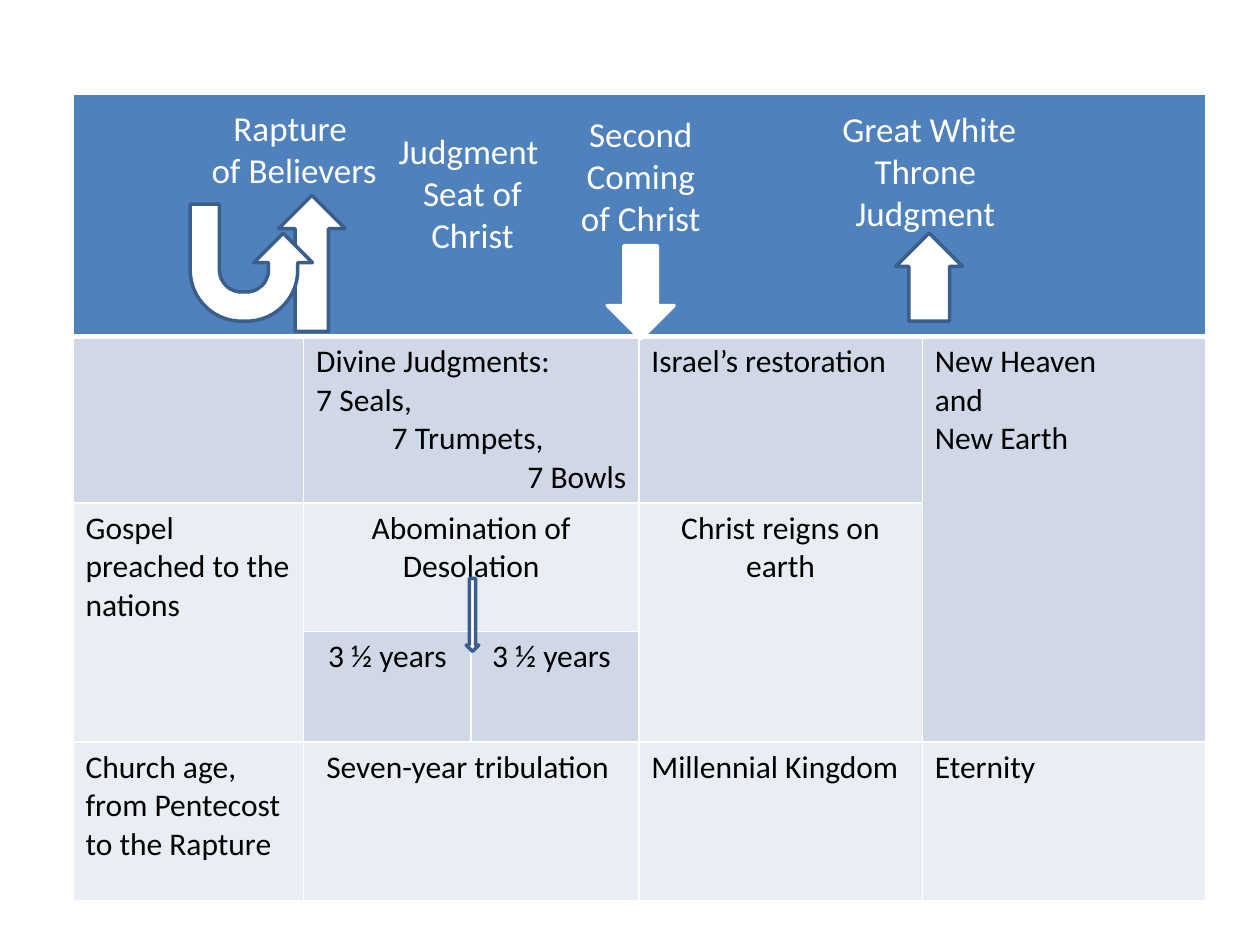
from dataclasses import dataclass

from lxml import etree
from pptx import Presentation
from pptx.dml.color import RGBColor
from pptx.enum.shapes import MSO_SHAPE
from pptx.enum.text import MSO_AUTO_SIZE, PP_ALIGN
from pptx.oxml.ns import qn
from pptx.util import Inches, Pt

LEFT, MID, RIGHT = PP_ALIGN.LEFT, PP_ALIGN.CENTER, PP_ALIGN.RIGHT
DOWN, UTURN = MSO_SHAPE.DOWN_ARROW, MSO_SHAPE.U_TURN_ARROW
FIT = MSO_AUTO_SIZE.SHAPE_TO_FIT_TEXT


@dataclass(frozen=True)
class Theme:
    font: str = "Calibri"
    white: str = "FFFFFF"
    black: str = "000000"
    head: str = "4F81BD"
    dark: str = "D0D8E8"
    pale: str = "E9EDF4"
    edge: str = "3A5F8C"
    body: int = 18
    label: int = 20
    line: int = 2
    rule: int = 1
    thick: int = 3


THEME = Theme()
COLS = [1.83, 1.33, 1.33, 2.25, 2.25]
ROWS = [1.92, 1.32, 1.02, 0.88, 1.26]

# row, column, row span, column span, fill, paragraphs
CELLS = [
    (0, 0, 1, 5, THEME.head, []),
    (1, 0, 1, 1, THEME.dark, []),
    (1, 1, 1, 2, THEME.dark, [("Divine Judgments:", LEFT), ("7 Seals,", LEFT),
                              ("7 Trumpets, ", MID), ("7 Bowls", RIGHT)]),
    (1, 3, 1, 1, THEME.dark, [("Israel’s restoration", LEFT)]),
    (1, 4, 3, 1, THEME.dark, [("New Heaven", LEFT), ("and", LEFT),
                              ("New Earth", LEFT)]),
    (2, 0, 2, 1, THEME.pale, [("Gospel preached to the nations", LEFT)]),
    (2, 1, 1, 2, THEME.pale, [("Abomination of Desolation", MID)]),
    (2, 3, 2, 1, THEME.pale, [("Christ reigns on earth", MID)]),
    (3, 1, 1, 1, THEME.dark, [("3 ½ years", MID)]),
    (3, 2, 1, 1, THEME.dark, [("3 ½ years ", MID)]),
    (4, 0, 1, 1, THEME.pale, [("Church age, from Pentecost to the Rapture", LEFT)]),
    (4, 1, 1, 2, THEME.pale, [("Seven-year tribulation ", MID)]),
    (4, 3, 1, 1, THEME.pale, [("Millennial Kingdom", LEFT)]),
    (4, 4, 1, 1, THEME.pale, [("Eternity", LEFT)]),
]

# left, top, width, height, lines
LABELS = [
    (1.51, 0.8, 1.65, 0.77, ["Rapture ", "of Believers"]),
    (2.91, 0.98, 1.68, 1.11, ["Judgment ", "Seat of Christ"]),
    (4.44, 0.84, 1.29, 1.11, ["Second Coming of Christ"]),
    (6.5, 0.8, 1.75, 1.11, ["Great White Throne ", "Judgment "]),
]

# kind, left, top, width, height, line colour, flipped, shaft width
ARROWS = [
    (DOWN, 4.82, 1.95, 0.53, 0.74, THEME.white, False, 0.5),
    (DOWN, 2.21, 1.55, 0.53, 1.08, THEME.edge, True, 0.5),
    (UTURN, 1.51, 1.62, 0.97, 0.93, THEME.edge, True, None),
    (DOWN, 7.11, 1.85, 0.53, 0.7, THEME.edge, True, 0.61),
]
SPLIT = (DOWN, 3.7, 4.59, 0.1, 0.58, THEME.edge, False, 0.5)


def paint(fill, color):
    fill.solid()
    fill.fore_color.rgb = RGBColor.from_string(color)


def write(frame, paras, size, color):
    for i, (text, align) in enumerate(paras):
        para = frame.paragraphs[0] if i == 0 else frame.add_paragraph()
        para.alignment = align
        run = para.add_run()
        run.text = text
        run.font.name = THEME.font
        run.font.size = Pt(size)
        run.font.color.rgb = RGBColor.from_string(color)


def border(cell, row):
    props = cell._tc.get_or_add_tcPr()
    for side in "LRTB":
        thick = (row, side) in ((0, "B"), (1, "T"))
        width = Pt(THEME.thick if thick else THEME.rule)
        line = etree.SubElement(props, qn("a:ln" + side), w=str(width))
        fill = etree.SubElement(line, qn("a:solidFill"))
        etree.SubElement(fill, qn("a:srgbClr"), val=THEME.white)


def add_grid(shapes):
    table = shapes.add_table(len(ROWS), len(COLS), Inches(0.58), Inches(0.75),
                             Inches(sum(COLS)), Inches(sum(ROWS))).table
    table.first_row = table.horz_banding = False
    for col, width in zip(table.columns, COLS):
        col.width = Inches(width)
    for row, height in zip(table.rows, ROWS):
        row.height = Inches(height)
    for row, col, down, across, color, paras in CELLS:
        for r in range(row, row + down):
            for c in range(col, col + across):
                border(table.cell(r, c), r)
                paint(table.cell(r, c).fill, color)
        cell = table.cell(row, col)
        if down * across > 1:
            cell.merge(table.cell(row + down - 1, col + across - 1))
        write(cell.text_frame, paras, THEME.body, THEME.black)


def add_label(shapes, left, top, width, height, lines):
    box = shapes.add_textbox(Inches(left), Inches(top), Inches(width), Inches(height))
    frame = box.text_frame
    frame.word_wrap = True
    frame.auto_size = FIT
    write(frame, [(line, MID) for line in lines], THEME.label, THEME.white)


def add_arrow(shapes, kind, left, top, width, height, color, flip, shaft):
    arrow = shapes.add_shape(kind, Inches(left), Inches(top),
                             Inches(width), Inches(height))
    arrow.shadow.inherit = False
    paint(arrow.fill, THEME.white)
    paint(arrow.line.fill, color)
    arrow.line.width = Pt(THEME.line)
    if shaft:
        arrow.adjustments[0] = shaft
    if flip:
        arrow._element.spPr.find(qn("a:xfrm")).set("flipV", "1")


def main():
    deck = Presentation()
    deck.slide_width, deck.slide_height = Inches(10), Inches(7.5)
    shapes = deck.slides.add_slide(deck.slide_layouts[6]).shapes

    # Timeline table and the mark between its two halves
    add_grid(shapes)
    add_arrow(shapes, *SPLIT)

    # Events in the header band
    for label in LABELS:
        add_label(shapes, *label)
    for arrow in ARROWS:
        add_arrow(shapes, *arrow)

    deck.save("out.pptx")


if __name__ == "__main__":
    main()
